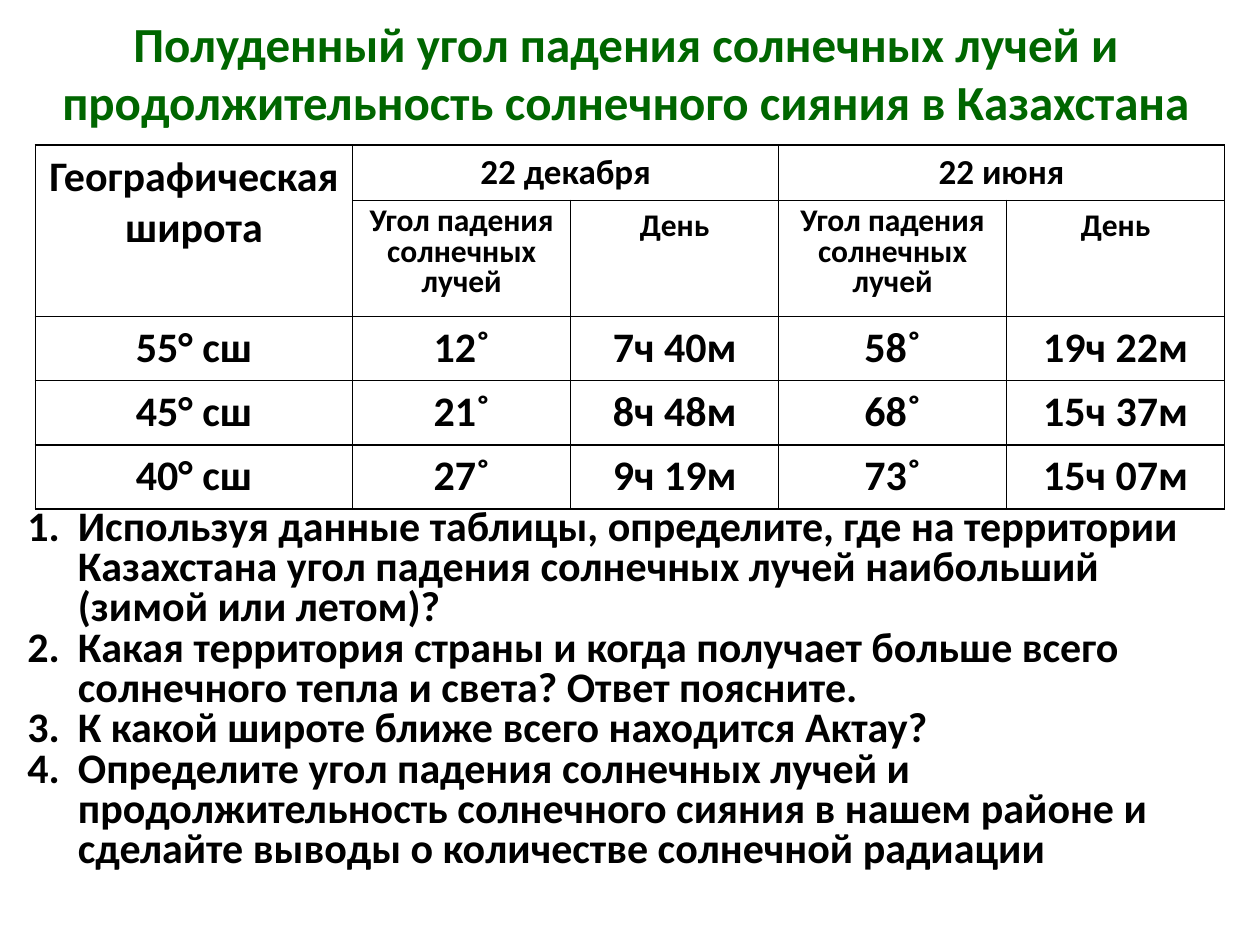
from lxml.etree import SubElement
from pptx import Presentation
from pptx.dml.color import RGBColor
from pptx.enum.text import MSO_ANCHOR, MSO_AUTO_SIZE, PP_ALIGN
from pptx.oxml.ns import qn
from pptx.util import Emu, Inches, Pt

BLACK = RGBColor(0x00, 0x00, 0x00)
GREEN = RGBColor(0x00, 0x66, 0x00)

WIDTH, HEIGHT = Inches(10), Inches(7.5)
COLUMN_WIDTHS = [2.52, 1.73, 1.65, 1.81, 1.73]
ROW_HEIGHTS = [0.44, 0.92, 0.51, 0.51, 0.51]

TITLE = ("Полуденный угол падения солнечных лучей и "
         "продолжительность солнечного сияния в Казахстана")
ANGLE, DAY = "Угол падения солнечных лучей", "День"
ROWS = [
    ["Географическая широта", "22 декабря", "", "22 июня", ""],
    ["", ANGLE, DAY, ANGLE, DAY],
    ["55° сш", "12˚", "7ч 40м", "58˚", "19ч 22м"],
    ["45° сш", "21˚", "8ч 48м", "68˚", "15ч 37м"],
    ["40° сш", "27˚", "9ч 19м", "73˚", "15ч 07м"],
]
MERGES = [((0, 0), (1, 0)), ((0, 1), (0, 2)), ((0, 3), (0, 4))]
QUESTIONS = [
    "Используя данные таблицы, определите, где на территории Казахстана "
    "угол падения солнечных лучей наибольший (зимой или летом)?",
    "Какая территория страны и когда получает больше всего солнечного "
    "тепла и света? Ответ поясните.",
    "К какой широте ближе всего находится Актау?",
    "Определите угол падения солнечных лучей и продолжительность солнечного "
    "сияния в нашем районе и сделайте выводы о количестве солнечной радиации",
]


def place(shape, left, top, width, height):
    """Position a shape by shares of the slide's size."""
    box = {"left": left * WIDTH, "top": top * HEIGHT,
           "width": width * WIDTH, "height": height * HEIGHT}
    for name, value in box.items():
        setattr(shape, name, Emu(int(value)))


def write(paragraph, text, size, color=BLACK, **paragraph_format):
    for name, value in paragraph_format.items():
        setattr(paragraph, name, value)
    run = paragraph.add_run()
    run.text = text
    for name, value in {"name": "Calibri", "size": Pt(size), "bold": True}.items():
        setattr(run.font, name, value)
    run.font.color.rgb = color


def add_title(slide):
    title = slide.shapes.title
    place(title, 0.012, 0.04, 0.969, 0.072)
    frame = title.text_frame
    frame.word_wrap = True
    frame.auto_size = MSO_AUTO_SIZE.NONE
    frame.vertical_anchor = MSO_ANCHOR.MIDDLE
    write(frame.paragraphs[0], TITLE, 28, GREEN, alignment=PP_ALIGN.CENTER)


def add_borders(cell):
    properties = cell._tc.get_or_add_tcPr()
    for position, side in enumerate(("lnL", "lnR", "lnT", "lnB")):
        line = properties.makeelement(qn(f"a:{side}"), {"w": str(Pt(1))})
        fill = SubElement(line, qn("a:solidFill"))
        SubElement(fill, qn("a:srgbClr"), val=str(BLACK))
        properties.insert(position, line)


def text_size(row, column):
    if row == 0 and column > 0:
        return 20
    return 18 if row == 1 else 24


def add_sunlight_table(slide):
    table = slide.shapes.add_table(
        len(ROWS), len(COLUMN_WIDTHS), Inches(0.28), Inches(1.15),
        Inches(sum(COLUMN_WIDTHS)), Inches(sum(ROW_HEIGHTS))).table
    for column, width in zip(table.columns, COLUMN_WIDTHS):
        column.width = Inches(width)
    for row, height in zip(table.rows, ROW_HEIGHTS):
        row.height = Inches(height)
    for first, last in MERGES:
        table.cell(*first).merge(table.cell(*last))

    for row, texts in enumerate(ROWS):
        for column, text in enumerate(texts):
            cell = table.cell(row, column)
            cell.fill.background()
            add_borders(cell)
            if text:
                write(cell.text_frame.paragraphs[0], text, text_size(row, column),
                      alignment=PP_ALIGN.CENTER,
                      line_spacing=0.8 if text == ANGLE else 1.0)


def number(paragraph):
    properties = paragraph._p.get_or_add_pPr()
    indent = Inches(0.4)
    properties.set("marL", str(indent))
    properties.set("indent", str(-indent))
    SubElement(properties, qn("a:buFont"), typeface="+mj-lt")
    SubElement(properties, qn("a:buAutoNum"), type="arabicPeriod")


def add_questions(slide):
    box = slide.shapes.add_textbox(0, 0, 0, 0)
    place(box, 0.012, 0.532, 0.976, 0.401)
    frame = box.text_frame
    frame.word_wrap = True
    for index, question in enumerate(QUESTIONS):
        paragraph = frame.add_paragraph() if index else frame.paragraphs[0]
        number(paragraph)
        write(paragraph, question, 24, line_spacing=0.8)


def main():
    presentation = Presentation()
    presentation.slide_width, presentation.slide_height = WIDTH, HEIGHT
    slide = presentation.slides.add_slide(presentation.slide_layouts[5])
    add_title(slide)
    add_sunlight_table(slide)
    add_questions(slide)
    presentation.save("out.pptx")


if __name__ == "__main__":
    main()
